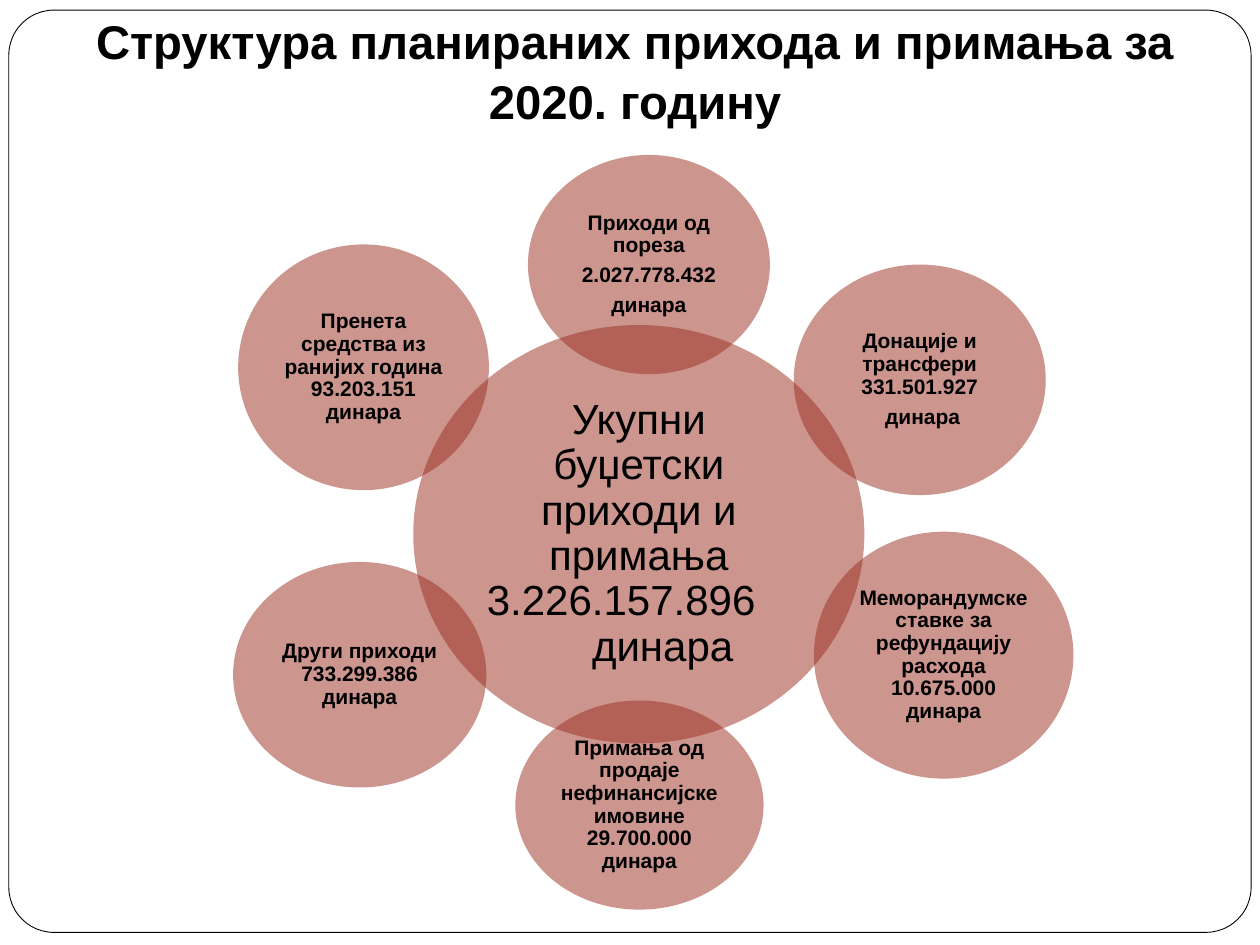
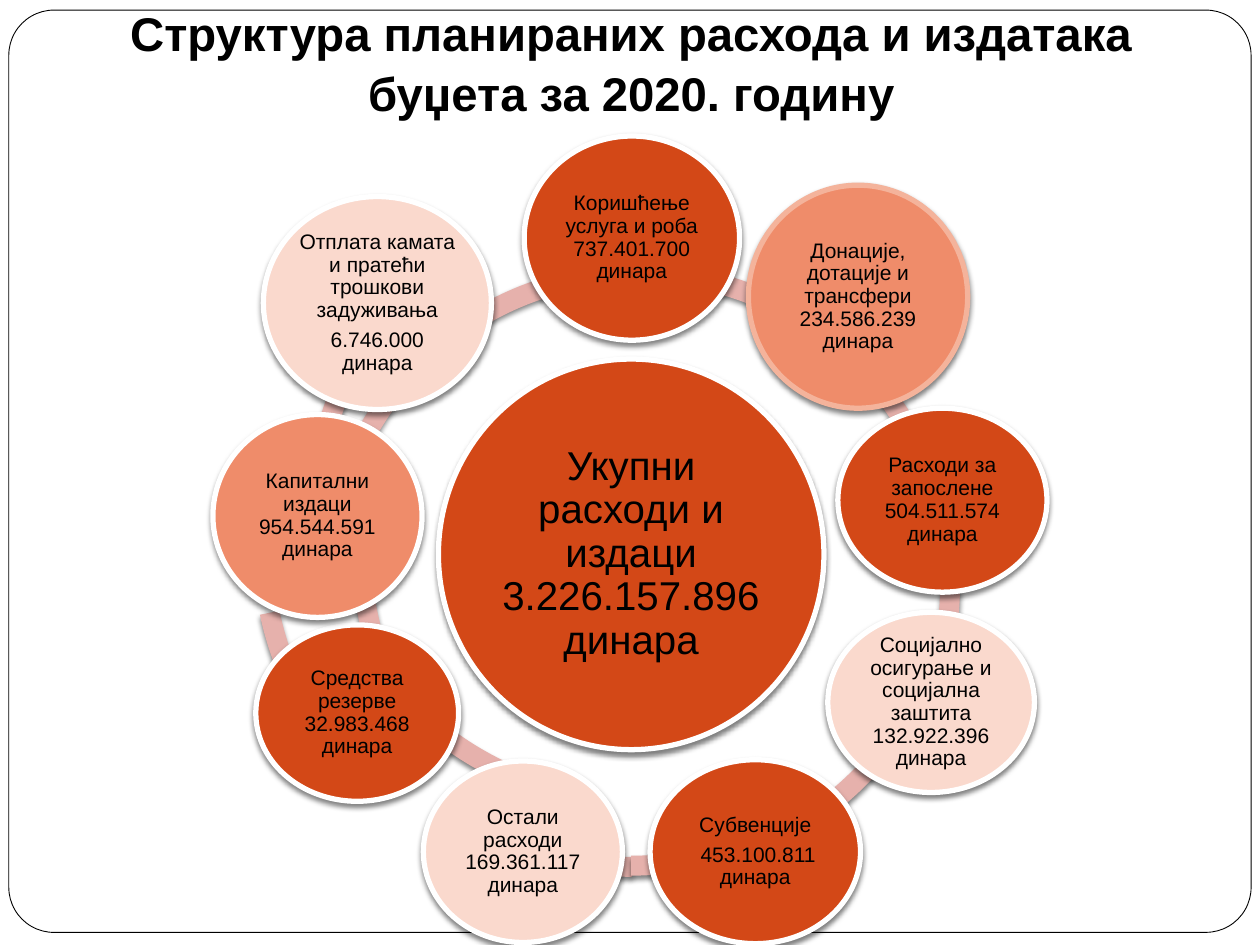
from dataclasses import dataclass

from lxml.etree import SubElement
from pptx import Presentation
from pptx.dml.color import RGBColor
from pptx.enum.shapes import MSO_SHAPE
from pptx.enum.text import MSO_ANCHOR, PP_ALIGN
from pptx.oxml.ns import qn
from pptx.util import Inches, Pt


@dataclass(frozen=True)
class Theme:
    font: str = "Arial"
    ink: str = "000000"
    paper: str = "FFFFFF"
    brick: str = "9B2D1F"
    orange: str = "D34817"
    salmon: str = "EF8C6A"
    salmon_edge: str = "F4B39B"
    blush: str = "FAD9CD"
    ring: str = "E6B1AC"
    title_size: int = 27
    income_total_size: int = 24
    expense_total_size: int = 23
    item_size: int = 12
    frame_width: float = 0.5
    edge_width: float = 3
    line_spacing: float = 0.9
    paragraph_gap: float = 0.35


THEME = Theme()


@dataclass(frozen=True)
class Line:
    """A paragraph pushed sideways by its margins, with no gap below."""
    text: str
    left: float = 0
    right: float = 0


RING_SIZE = 5.1
RING_THICKNESS = 0.031

INCOME_TOTAL = ((3.28, 2.58, 3.58, 3.32), [
    Line("Укупни буџетски приходи и примања"),
    Line("3.226.157.896", right=0.28),
    Line("динара", left=0.38),
])
INCOME_ITEMS = [
    ((4.19, 1.23, 1.92, 1.74), ["Приходи од пореза", "2.027.778.432", "динара"]),
    ((6.3, 2.1, 2, 1.83), ["Донације и трансфери 331.501.927", " динара"]),
    ((6.46, 4.22, 2.06, 1.96),
     ["Меморандумске ставке за рефундацију расхода 10.675.000 динара"]),
    ((4.09, 5.56, 1.97, 1.66),
     ["Примања од продаје нефинансијске имовине 29.700.000 динара"]),
    ((1.85, 4.46, 2.01, 1.79), ["Други приходи 733.299.386 динара"]),
    ((1.89, 1.94, 1.99, 1.95),
     ["Пренета средства из ранијих година 93.203.151 динара"]),
]

# left, top, start angle, end angle
RING_ARCS = [
    (2.01, 1.81, 138.86, 168.24),
    (2.48, 1.33, 105, 129.6),
    (2.47, 1.86, 90.07, 112.32),
    (2.46, 1.85, 66, 90),
    (2.52, 1.88, 41.1, 66.9),
    (2.63, 1.84, 16.96, 42.68),
    (2.52, 2.09, 206.72, 13.17),
    (2.43, 1.51, 190.3, 214.75),
    (2.79, 1.83, 157.51, 183.63),
]
EXPENSE_TOTAL = ((3.48, 2.85, 3.06, 3.1),
                 ["Укупни расходи и издаци 3.226.157.896 динара"])
EXPENSE_ITEMS = [
    ((4.16, 1.08, 1.71, 1.62), THEME.orange,
     ["Коришћење услуга и роба 737.401.700 динара"]),
    ((5.94, 1.47, 1.74, 1.77), THEME.salmon,
     ["Донације, дотације и трансфери 234.586.239 динара"]),
    ((6.65, 3.24, 1.66, 1.46), THEME.orange,
     ["Расходи за запослене 504.511.574 динара"]),
    ((6.57, 4.86, 1.64, 1.43), THEME.blush,
     ["Социјално осигурање и социјална заштита 132.922.396 динара"]),
    ((5.16, 6.03, 1.67, 1.46), THEME.orange,
     ["Субвенције", " 453.100.811 динара"]),
    ((3.36, 6.04, 1.58, 1.44), THEME.blush,
     ["Остали расходи 169.361.117 динара"]),
    ((2.03, 4.96, 1.61, 1.4), THEME.orange,
     ["Средства резерве 32.983.468 динара"]),
    ((1.69, 3.29, 1.66, 1.61), THEME.salmon,
     ["Капитални издаци 954.544.591 динара"]),
    ((2.09, 1.56, 1.81, 1.69), THEME.blush,
     ["Отплата камата и пратећи трошкови задуживања", "6.746.000 динара"]),
]
HIGHLIGHTED_ITEM = 1


def add_filled(slide, preset, box, fill, edge=None, edge_width=THEME.edge_width):
    shape = slide.shapes.add_shape(preset, *map(Inches, box))
    shape.shadow.inherit = False
    shape.fill.solid()
    shape.fill.fore_color.rgb = RGBColor.from_string(fill)
    if edge:
        shape.line.color.rgb = RGBColor.from_string(edge)
        shape.line.width = Pt(edge_width)
    else:
        shape.line.fill.background()
    return shape


def set_alpha(color, percent):
    SubElement(color, qn("a:alpha"), val=str(percent * 1000))


def cast_shadow(shape):
    effects = shape._element.spPr.find(qn("a:effectLst"))
    shadow = SubElement(effects, qn("a:outerShdw"), blurRad=str(Pt(3)),
                        dist=str(Pt(2)), dir="5400000", rotWithShape="0")
    set_alpha(SubElement(shadow, qn("a:srgbClr"), val=THEME.ink), 50)


def set_insets(frame, left, top, right, bottom):
    frame.margin_left, frame.margin_top = Inches(left), Inches(top)
    frame.margin_right, frame.margin_bottom = Inches(right), Inches(bottom)


def add_centred_run(paragraph, text, size, bold):
    paragraph.alignment = PP_ALIGN.CENTER
    run = paragraph.add_run()
    run.text = text
    run.font.name = THEME.font
    run.font.size = Pt(size)
    run.font.bold = bold
    run.font.color.rgb = RGBColor.from_string(THEME.ink)


def write_in_circle(circle, paragraphs, size, bold, inset):
    frame = circle.text_frame
    frame.word_wrap = True
    frame.vertical_anchor = MSO_ANCHOR.MIDDLE
    set_insets(frame, inset, inset, inset, inset)
    for index, content in enumerate(paragraphs):
        paragraph = frame.add_paragraph() if index else frame.paragraphs[0]
        paragraph.line_spacing = THEME.line_spacing
        if isinstance(content, Line):
            margins = paragraph._p.get_or_add_pPr()
            margins.set("marL", str(Inches(content.left)))
            margins.set("marR", str(Inches(content.right)))
            paragraph.space_after = Pt(0)
            content = content.text
        else:
            paragraph.space_after = Pt(size * THEME.paragraph_gap)
        add_centred_run(paragraph, content, size, bold)


def add_income_circle(slide, box, paragraphs, size=THEME.item_size,
                      bold=True, inset=0.02):
    circle = add_filled(slide, MSO_SHAPE.OVAL, box, THEME.brick)
    set_alpha(circle._element.spPr.find(qn("a:solidFill"))[0], 50)
    write_in_circle(circle, paragraphs, size, bold, inset)


def add_expense_circle(slide, box, fill, paragraphs, edge=THEME.paper,
                       size=THEME.item_size, inset=0.02):
    circle = add_filled(slide, MSO_SHAPE.OVAL, box, fill, edge)
    cast_shadow(circle)
    write_in_circle(circle, paragraphs, size, False, inset)


def add_ring_arc(slide, left, top, start, end):
    arc = add_filled(slide, MSO_SHAPE.BLOCK_ARC,
                     (left, top, RING_SIZE, RING_SIZE), THEME.ring)
    # Angles are stored in 60000ths of a degree, adjustments in 100000ths.
    arc.adjustments[0] = start * 0.6
    arc.adjustments[1] = end * 0.6
    arc.adjustments[2] = RING_THICKNESS
    cast_shadow(arc)


def add_framed_slide(deck, title, title_box):
    slide = deck.slides.add_slide(deck.slide_layouts[6])
    frame = add_filled(slide, MSO_SHAPE.ROUNDED_RECTANGLE,
                       (0.07, 0.08, 9.86, 7.32), THEME.paper,
                       THEME.ink, THEME.frame_width)
    frame.adjustments[0] = 0.049
    heading = slide.shapes.add_textbox(*map(Inches, title_box)).text_frame
    heading.word_wrap = True
    heading.vertical_anchor = MSO_ANCHOR.BOTTOM
    set_insets(heading, 0.1, 0.05, 0.1, 0.1)
    heading.paragraphs[0].line_spacing = 1.05
    add_centred_run(heading.paragraphs[0], title, THEME.title_size, True)
    return slide


def build_income_slide(deck):
    slide = add_framed_slide(
        deck, "Структура планираних прихода и примања за 2020. годину",
        (0.54, 0.27, 9, 0.85))
    add_income_circle(slide, *INCOME_TOTAL, size=THEME.income_total_size,
                      bold=False, inset=0.03)
    for box, paragraphs in INCOME_ITEMS:
        add_income_circle(slide, box, paragraphs)


def build_expense_slide(deck):
    slide = add_framed_slide(
        deck, "Структура планираних расхода и издатака буџета за 2020. годину",
        (0.51, 0.13, 9, 0.93))
    for arc in RING_ARCS:
        add_ring_arc(slide, *arc)
    total_box, total_text = EXPENSE_TOTAL
    add_expense_circle(slide, total_box, THEME.orange, total_text,
                       size=THEME.expense_total_size, inset=0.03)
    for index, (box, fill, paragraphs) in enumerate(EXPENSE_ITEMS):
        edge = THEME.salmon_edge if index == HIGHLIGHTED_ITEM else THEME.paper
        add_expense_circle(slide, box, fill, paragraphs, edge)


def main():
    deck = Presentation()
    deck.slide_width, deck.slide_height = Inches(10), Inches(7.5)
    build_income_slide(deck)
    build_expense_slide(deck)
    deck.save("out.pptx")


if __name__ == "__main__":
    main()
